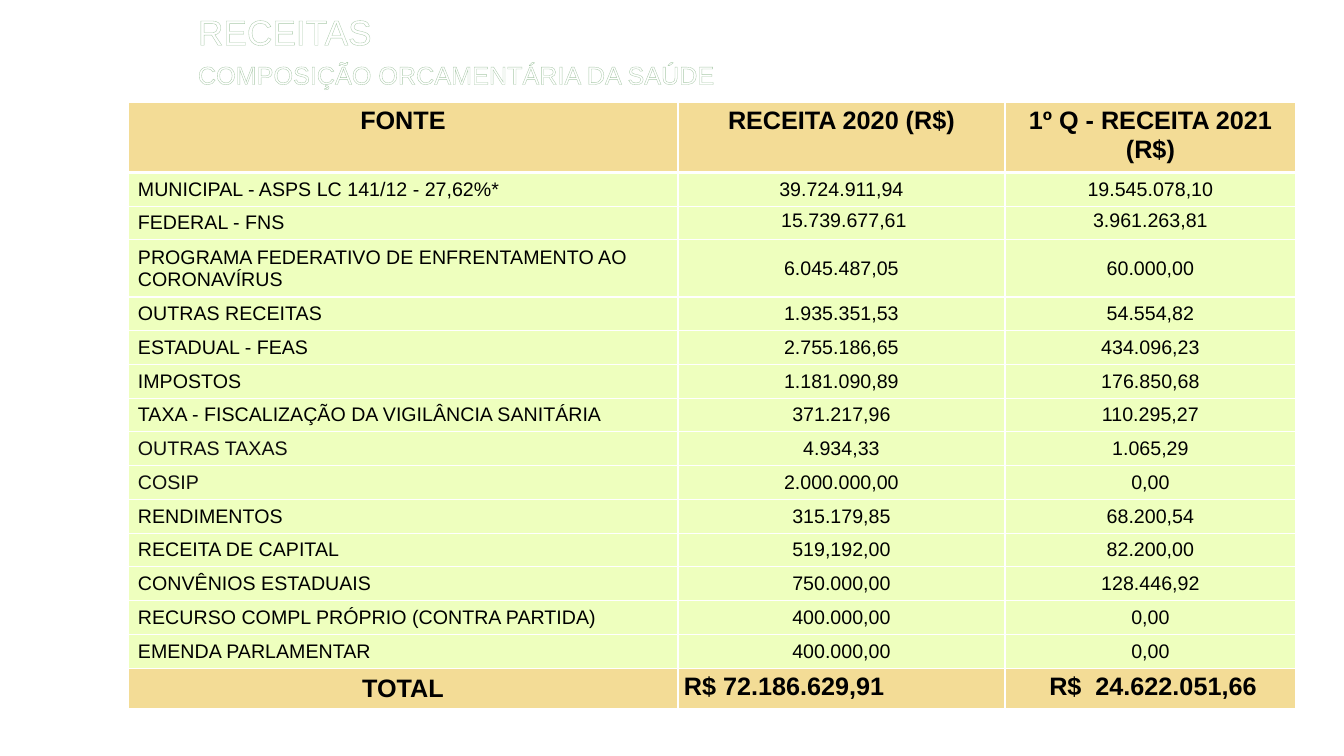
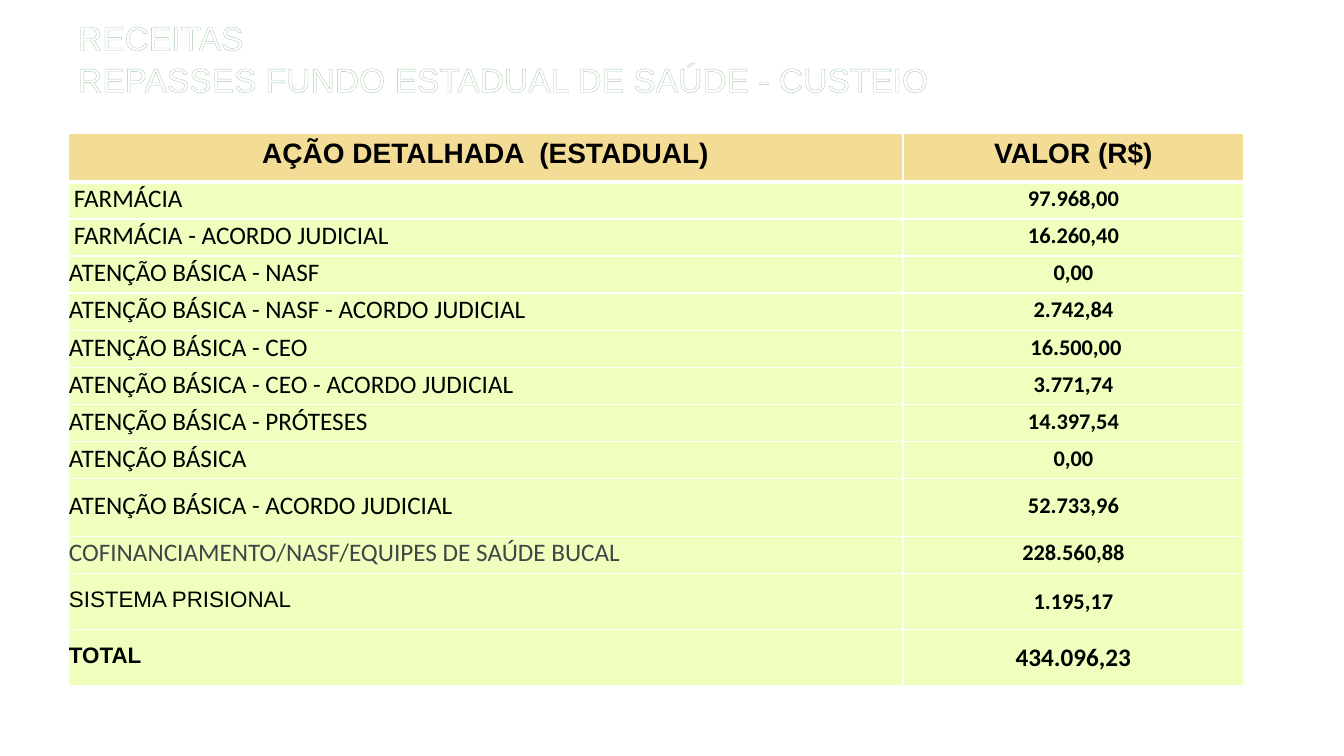
from lxml import etree
from pptx import Presentation
from pptx.dml.color import RGBColor
from pptx.enum.text import MSO_ANCHOR, PP_ALIGN
from pptx.oxml.ns import qn
from pptx.util import Pt

LEFT, CENTER = PP_ALIGN.LEFT, PP_ALIGN.CENTER
TOP, MIDDLE = MSO_ANCHOR.TOP, MSO_ANCHOR.MIDDLE
EMU_PER_PX = 914400 / 100.8
SLIDE_SIZE = (1344, 756)

COLORS = {
    "text": "000000", "soft": "0D0D0D", "gray": "444444", "white": "FFFFFF",
    "band": "F3DC96", "body": "EEFFBE", "outline": "AACAAA",
}

# Cell formats: insets are left, top, right, bottom in px
ROOMY, TIGHT, INDENTED = (10, 5, 10, 5), (1, 1, 1, 5), (6, 1, 1, 5)
BASE = {"size": 14, "name": "Arial", "bold": False, "color": "text", "fill": "body",
        "align": CENTER, "anchor": MIDDLE, "insets": ROOMY}
HEADER = BASE | {"size": 18, "bold": True, "fill": "band", "anchor": TOP}
LABEL = BASE | {"align": LEFT}
ACTION = LABEL | {"size": 18, "name": "Calibri", "insets": TIGHT}
AMOUNT = BASE | {"size": 16, "name": "Calibri", "bold": True, "insets": TIGHT}
TOTAL = HEADER | {"anchor": MIDDLE}

# Content
SLIDES = [
    {
        "title": {"box": (188, 10, 1100, 80), "space": 5, "lines": [
            ("RECEITAS", 25.2),
            ("COMPOSIÇÃO ORCAMENTÁRIA DA SAÚDE", 18)]},
        "origin": (128, 102),
        "columns": [550, 327, 291],
        "heights": [67, 34, 33, 54] + [34, 33] * 5 + [34, 40],
        "header": HEADER,
        "formats": [LABEL, BASE, BASE],
        "rows": [
            ("FONTE", "RECEITA 2020 (R$)", "1º Q - RECEITA 2021 (R$)"),
            ("MUNICIPAL - ASPS LC 141/12 - 27,62%*", "39.724.911,94", "19.545.078,10"),
            ("FEDERAL - FNS", "15.739.677,61", "3.961.263,81"),
            ("PROGRAMA FEDERATIVO DE ENFRENTAMENTO AO CORONAVÍRUS",
             "6.045.487,05", "60.000,00"),
            ("OUTRAS RECEITAS", "1.935.351,53", "54.554,82"),
            ("ESTADUAL - FEAS", "2.755.186,65", "434.096,23"),
            ("IMPOSTOS", "1.181.090,89", "176.850,68"),
            ("TAXA - FISCALIZAÇÃO DA VIGILÂNCIA SANITÁRIA", "371.217,96", "110.295,27"),
            ("OUTRAS TAXAS", "4.934,33", "1.065,29"),
            ("COSIP", "2.000.000,00", "0,00"),
            ("RENDIMENTOS", "315.179,85", "68.200,54"),
            ("RECEITA DE CAPITAL", "519,192,00", "82.200,00"),
            ("CONVÊNIOS ESTADUAIS", "750.000,00", "128.446,92"),
            ("RECURSO COMPL PRÓPRIO (CONTRA PARTIDA)", "400.000,00", "0,00"),
            ("EMENDA PARLAMENTAR", "400.000,00", "0,00"),
            ("TOTAL", "R$ 72.186.629,91", "R$  24.622.051,66"),
        ],
        # (row, column): format values that differ
        "exceptions": {
            (2, 1): {"insets": INDENTED},
            (2, 2): {"insets": TIGHT},
            (8, 0): {"color": "soft"},
            (9, 0): {"color": "soft"},
            (15, 0): TOTAL,
            (15, 1): TOTAL | {"align": LEFT, "insets": INDENTED},
            (15, 2): TOTAL | {"insets": INDENTED},
        },
    },
    {
        "title": {"box": (68, 17, 1210, 85), "space": 1, "lines": [
            ("RECEITAS", 24),
            ("REPASSES FUNDO ESTADUAL DE SAÚDE - CUSTEIO", 24)]},
        "origin": (68, 133),
        "columns": [835, 341],
        "heights": [49] + [37] * 3 + [38] + [37] * 4 + [58, 37, 56, 56],
        "header": HEADER | {"size": 20},
        "formats": [ACTION, AMOUNT],
        "rows": [
            ("AÇÃO DETALHADA  (ESTADUAL)", "VALOR (R$)"),
            ("FARMÁCIA", "97.968,00"),
            ("FARMÁCIA - ACORDO JUDICIAL", "16.260,40"),
            ("ATENÇÃO BÁSICA - NASF", "0,00"),
            ("ATENÇÃO BÁSICA - NASF - ACORDO JUDICIAL", "2.742,84"),
            ("ATENÇÃO BÁSICA - CEO", "16.500,00"),
            ("ATENÇÃO BÁSICA - CEO - ACORDO JUDICIAL", "3.771,74"),
            ("ATENÇÃO BÁSICA - PRÓTESES", "14.397,54"),
            ("ATENÇÃO BÁSICA", "0,00"),
            ("ATENÇÃO BÁSICA - ACORDO JUDICIAL", "52.733,96"),
            ("COFINANCIAMENTO/NASF/EQUIPES DE SAÚDE BUCAL", "228.560,88"),
            ("SISTEMA PRISIONAL", "1.195,17"),
            ("TOTAL", "434.096,23"),
        ],
        "exceptions": {
            (1, 0): {"insets": INDENTED},
            (2, 0): {"insets": INDENTED},
            (5, 1): {"insets": INDENTED},
            (10, 0): {"color": "gray"},
            (11, 0): {"name": "Arial", "size": 16},
            (11, 1): {"insets": ROOMY},
            (12, 0): {"name": "Arial", "size": 16, "bold": True},
            (12, 1): {"insets": ROOMY, "size": 18},
        },
    },
]


def px(length):
    return round(length * EMU_PER_PX)


def set_font(font, style):
    values = {"size": Pt(style["size"]), "name": style["name"], "bold": style["bold"]}
    for attribute, value in values.items():
        setattr(font, attribute, value)
    font.color.rgb = RGBColor.from_string(COLORS[style["color"]])


def set_insets(target, insets):
    for side, inset in zip(("left", "top", "right", "bottom"), insets):
        setattr(target, f"margin_{side}", px(inset))


def line_element(tag, points, color):
    line = etree.Element(qn(tag), w=str(Pt(points)))
    fill = etree.SubElement(line, qn("a:solidFill"))
    etree.SubElement(fill, qn("a:srgbClr"), val=COLORS[color])
    return line


def add_title(slide, title):
    frame = slide.shapes.add_textbox(*map(px, title["box"])).text_frame
    frame.word_wrap = True
    set_insets(frame, (10, 0, 10, 0))
    for index, (text, size) in enumerate(title["lines"]):
        paragraph = frame.add_paragraph() if index else frame.paragraphs[0]
        if index:
            paragraph.space_before = Pt(title["space"])
        run = paragraph.add_run()
        run.text = text
        set_font(run.font, BASE | {"size": size, "color": "white"})
        # Thin outline around the white letters
        run.font._element.insert(0, line_element("a:ln", 0.8, "outline"))


def fill_cell(cell, text, style, borders):
    properties = cell._tc.get_or_add_tcPr()
    for side, points in borders.items():
        properties.append(line_element(f"a:ln{side}", points, "white"))
    cell.fill.solid()
    cell.fill.fore_color.rgb = RGBColor.from_string(COLORS[style["fill"]])
    cell.vertical_anchor = style["anchor"]
    set_insets(cell, style["insets"])
    cell.text = text
    paragraph = cell.text_frame.paragraphs[0]
    paragraph.alignment = style["align"]
    set_font(paragraph.runs[0].font, style)


def add_data_table(slide, content):
    rows, columns, heights = content["rows"], content["columns"], content["heights"]
    size = (sum(columns), sum(heights))
    table = slide.shapes.add_table(
        len(rows), len(columns), *map(px, content["origin"] + size)).table
    table.horz_banding = False
    for column, width in zip(table.columns, columns):
        column.width = px(width)
    for row, height in zip(table.rows, heights):
        row.height = px(height)
    for row_index, texts in enumerate(rows):
        # The rule under the header is thicker
        borders = {"L": 1, "R": 1, "T": 3 if row_index == 1 else 1,
                   "B": 1 if row_index else 3}
        for column_index, text in enumerate(texts):
            style = content["formats"][column_index] if row_index else content["header"]
            style = style | content["exceptions"].get((row_index, column_index), {})
            fill_cell(table.cell(row_index, column_index), text, style, borders)


def main():
    presentation = Presentation()
    presentation.slide_width, presentation.slide_height = map(px, SLIDE_SIZE)
    for content in SLIDES:
        slide = presentation.slides.add_slide(presentation.slide_layouts[6])
        add_title(slide, content["title"])
        add_data_table(slide, content)
    presentation.save("out.pptx")


if __name__ == "__main__":
    main()
